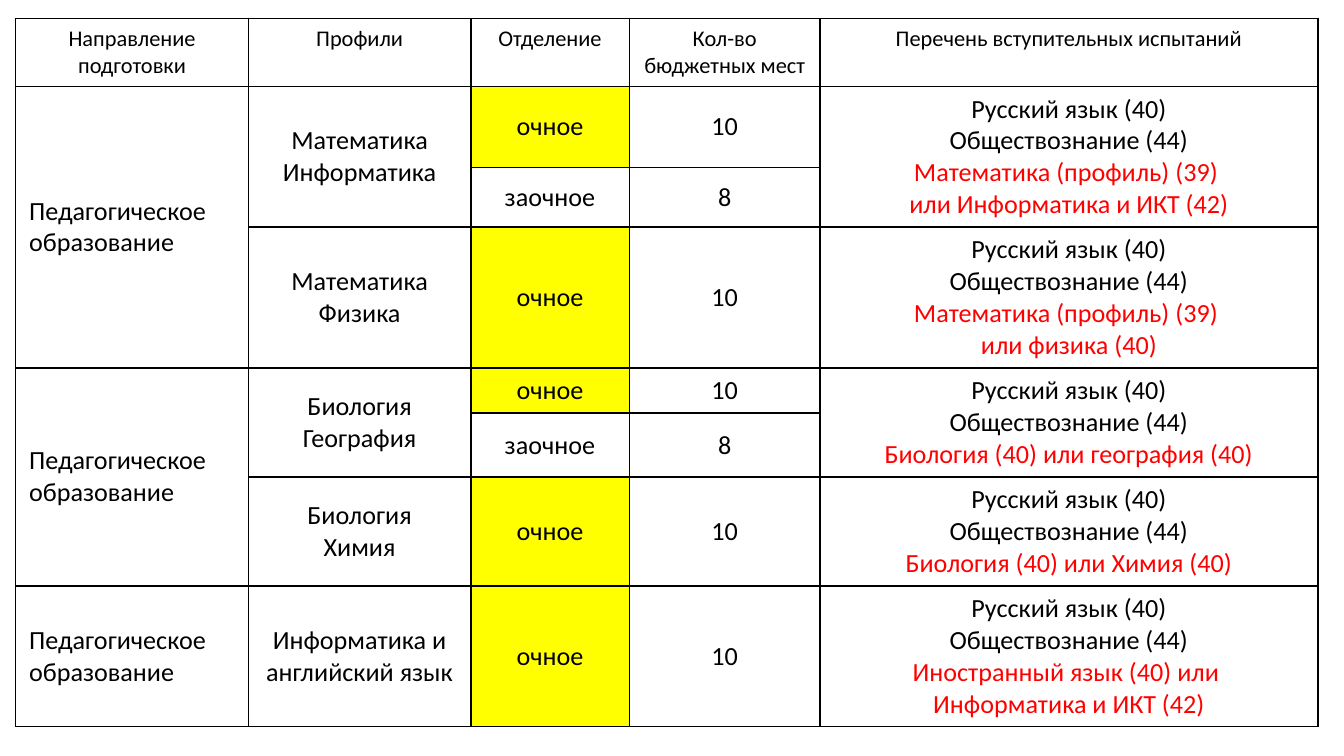
from lxml import etree
from pptx import Presentation
from pptx.dml.color import RGBColor
from pptx.enum import text
from pptx.oxml.ns import qn
from pptx.util import Pt


def color(hex_value):
    return RGBColor.from_string(hex_value)


def add_borders(cell, hex_value, width):
    properties = cell._tc.get_or_add_tcPr()
    for position, side in enumerate(("a:lnL", "a:lnR", "a:lnT", "a:lnB")):
        line = etree.Element(qn(side), w=str(Pt(width)))
        fill = etree.SubElement(line, qn("a:solidFill"))
        etree.SubElement(fill, qn("a:srgbClr"), val=hex_value)
        properties.insert(position, line)


presentation = Presentation()
presentation.slide_width = Pt(720)
presentation.slide_height = Pt(405)
slide = presentation.slides.add_slide(presentation.slide_layouts[6])

column_widths = [124.8, 119, 85, 102.2, 266.6]
row_heights = [36.4, 43.4, 31, 74.5, 23.6, 34.3, 57.4, 74.5]
direction = "Педагогическое образование"
common_exams = "Русский язык (40)\nОбществознание (44)\n"
rows = [
    ["Направление подготовки", "Профили", "Отделение", "Кол-во бюджетных мест",
     "Перечень вступительных испытаний"],
    [direction, "Математика Информатика", "очное", "10",
     common_exams + "Математика (профиль) (39) \nили Информатика и ИКТ (42)"],
    ["", "", "заочное", "8", ""],
    ["", "Математика Физика", "очное", "10",
     common_exams + "Математика (профиль) (39) \nили физика (40)"],
    [direction, "Биология География", "очное", "10",
     common_exams + "Биология (40) или география (40)"],
    ["", "", "заочное", "8", ""],
    ["", "Биология\nХимия", "очное", "10",
     common_exams + "Биология (40) или Химия (40)"],
    [direction, "Информатика и английский язык", "очное", "10",
     common_exams + "Иностранный язык (40) или \nИнформатика и ИКТ (42)"],
]

frame = slide.shapes.add_table(
    len(rows), len(column_widths), Pt(8.4), Pt(9.8),
    Pt(sum(column_widths)), Pt(sum(row_heights)))
table = frame.table
table.first_row = False
table.horz_banding = False
for column, width in zip(table.columns, column_widths):
    column.width = Pt(width)
for row, height in zip(table.rows, row_heights):
    row.height = Pt(height)

for first_row in (1, 4):
    for column_index, span in ((0, 3), (1, 2), (4, 2)):
        table.cell(first_row, column_index).merge(
            table.cell(first_row + span - 1, column_index))

for row_index, values in enumerate(rows):
    for column_index, value in enumerate(values):
        cell = table.cell(row_index, column_index)
        if cell.is_spanned:
            continue
        is_header = row_index == 0
        cell.text_frame.text = value
        cell.vertical_anchor = (
            text.MSO_ANCHOR.TOP if is_header else text.MSO_ANCHOR.MIDDLE)
        if value == "очное":
            cell.fill.solid()
            cell.fill.fore_color.rgb = color("FFFF00")
        else:
            cell.fill.background()
        add_borders(cell, "000000", 1)
        for paragraph_index, paragraph in enumerate(cell.text_frame.paragraphs):
            is_left = column_index == 0 and not is_header
            paragraph.alignment = (
                text.PP_ALIGN.LEFT if is_left else text.PP_ALIGN.CENTER)
            is_elective = column_index == 4 and paragraph_index >= 2
            for run in paragraph.runs:
                run.font.name = "Calibri"
                run.font.size = Pt(12 if is_header else 14)
                run.font.color.rgb = color("FF0000" if is_elective else "000000")

presentation.save("out.pptx")
